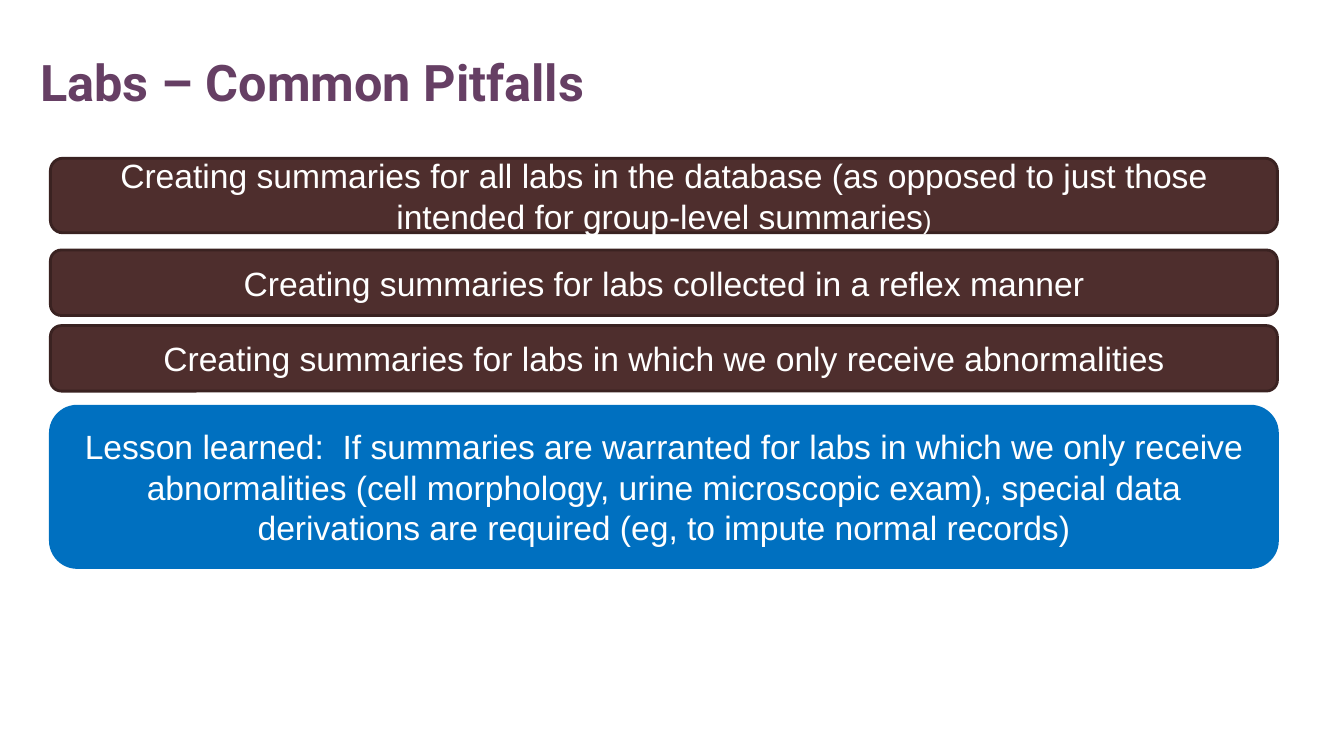
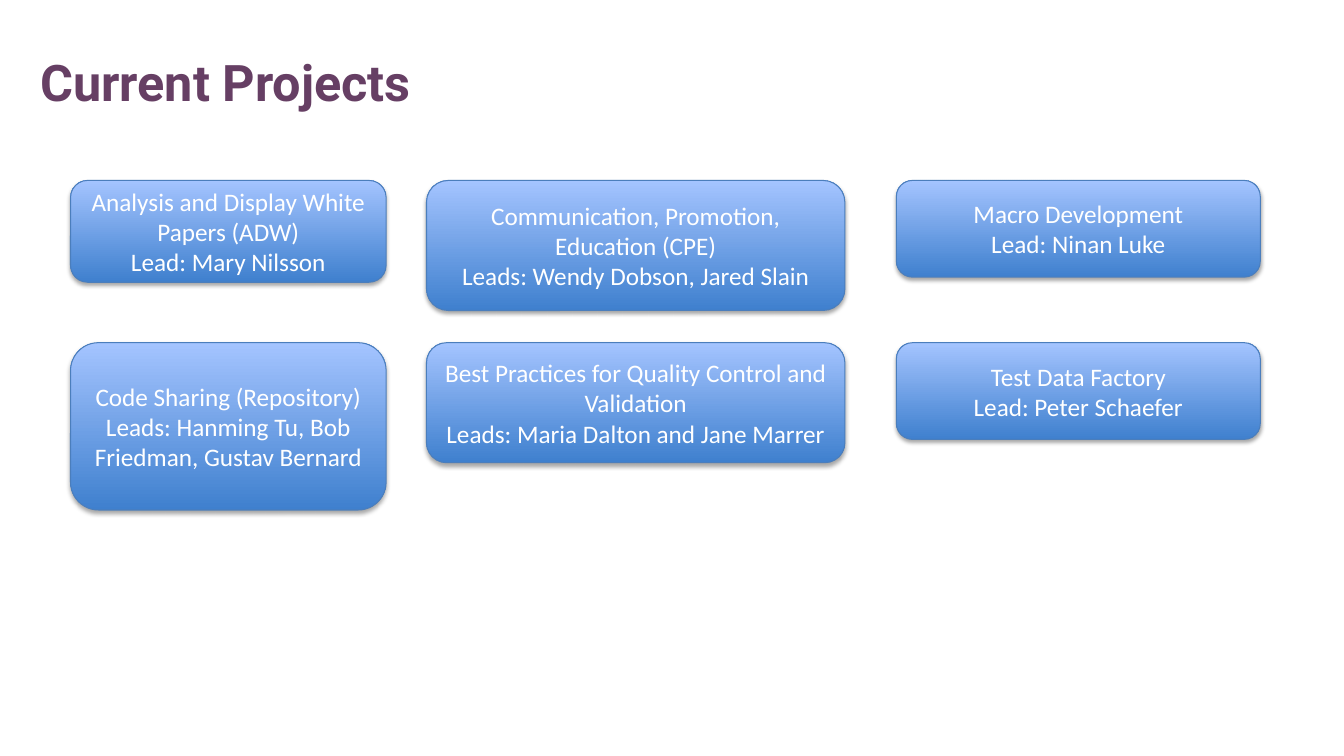
"""Build two slides: common lab pitfalls and current projects."""
from lxml.etree import SubElement
from pptx import Presentation
from pptx.dml.color import RGBColor
from pptx.enum.shapes import MSO_SHAPE
from pptx.enum.text import MSO_ANCHOR, PP_ALIGN
from pptx.oxml.ns import qn
from pptx.util import Emu, Pt

PX = 9144
COLORS = {
    "title": "663F64", "text": "FFFFFF", "shadow": "000000",
    "pitfall": "4E2E2D", "pitfall_line": "3A2221", "lesson": "0070C0",
    "project_bottom": "3F80CE", "project_top": "A4C4FF", "project_line": "4B7EBC",
}
TITLE_FONT = {"name": "Roboto", "size": Pt(36), "bold": True}
PITFALL_FONT = {"name": "Arial", "size": Pt(24)}
PROJECT_FONT = {"name": "Calibri", "size": Pt(18)}


def write_text(shape, paragraphs, font_format, color, align, anchor):
    """Write paragraphs, each a list of runs, in one format."""
    frame = shape.text_frame
    frame.word_wrap = True
    frame.vertical_anchor = anchor
    for index, runs in enumerate(paragraphs):
        paragraph = frame.add_paragraph() if index else frame.paragraphs[0]
        paragraph.alignment = align
        for text in runs:
            run = paragraph.add_run()
            run.text = text
            for name, value in font_format.items():
                setattr(run.font, name, value)
            run.font.color.rgb = RGBColor.from_string(COLORS[color])


def add_box(slide, bounds, paragraphs, font_format, line_color, line_width):
    """Add a rounded box with centred white text and return it."""
    shape = slide.shapes.add_shape(
        MSO_SHAPE.ROUNDED_RECTANGLE, *[Emu(length * PX) for length in bounds])
    shape.shadow.inherit = False
    shape.line.color.rgb = RGBColor.from_string(COLORS[line_color])
    shape.line.width = Pt(line_width)
    write_text(shape, paragraphs, font_format, "text", PP_ALIGN.CENTER, MSO_ANCHOR.MIDDLE)
    return shape


presentation = Presentation()
presentation.slide_width = Emu(1333 * PX)
presentation.slide_height = Emu(750 * PX)

slides = []
for title in ("Labs – Common Pitfalls", "Current Projects"):
    slide = presentation.slides.add_slide(presentation.slide_layouts[6])
    title_box = slide.shapes.add_textbox(*[Emu(length * PX) for length in (30, 46, 1278, 111)])
    write_text(title_box, [[title]], TITLE_FONT, "title", PP_ALIGN.LEFT, MSO_ANCHOR.TOP)
    slides.append(slide)
pitfalls_slide, projects_slide = slides

pitfalls = [
    (157, 74, "pitfall", "pitfall_line",
     ["Creating summaries for all labs in the database (as opposed to just those "
      "intended for group-level summaries", ")"]),
    (248, 65, "pitfall", "pitfall_line",
     ["Creating summaries for labs collected in a reflex manner"]),
    (323, 65, "pitfall", "pitfall_line",
     ["Creating summaries for labs in which we only receive abnormalities"]),
    (403, 160, "lesson", "lesson",
     ["Lesson learned:  If summaries are warranted for labs in which we only receive "
      "abnormalities (cell morphology, urine microscopic exam), special data "
      "derivations are required (eg, to impute normal records)"]),
]
for top, height, fill_color, line_color, runs in pitfalls:
    box = add_box(pitfalls_slide, (50, top, 1217, height), [runs], PITFALL_FONT, line_color, 2)
    box.fill.solid()
    box.fill.fore_color.rgb = RGBColor.from_string(COLORS[fill_color])
    for small_run in box.text_frame.paragraphs[0].runs[1:]:
        small_run.font.size = Pt(18)

row_tops = (179, 340)
project_columns = [
    (70, 313, [
        (101, "Analysis and Display White Papers (ADW)", "Lead: Mary Nilsson"),
        (166, "Code Sharing (Repository)", "Leads: Hanming Tu, Bob Friedman, Gustav Bernard"),
    ]),
    (423, 415, [
        (129, "Communication, Promotion, Education (CPE)", "Leads: Wendy Dobson, Jared Slain"),
        (119, "Best Practices for Quality Control and Validation",
         "Leads: Maria Dalton and Jane Marrer"),
    ]),
    (889, 361, [
        (96, "Macro Development", "Lead: Ninan Luke"),
        (96, "Test Data Factory", "Lead: Peter Schaefer"),
    ]),
]
for left, width, projects in project_columns:
    for top, (height, project, leads) in zip(row_tops, projects):
        box = add_box(projects_slide, (left, top, width, height), [[project], [leads]],
                      PROJECT_FONT, "project_line", 0.75)
        box.fill.gradient()
        box.fill.gradient_angle = 90
        for stop, color in zip(box.fill.gradient_stops, ("project_bottom", "project_top")):
            stop.color.rgb = RGBColor.from_string(COLORS[color])
        effects = box._element.spPr.find(qn("a:effectLst"))
        shadow = SubElement(effects, qn("a:outerShdw"), blurRad=str(Pt(3.1)),
                            dist=str(Pt(1.8)), dir="5400000", rotWithShape="0")
        shadow_color = SubElement(shadow, qn("a:srgbClr"), val=COLORS["shadow"])
        SubElement(shadow_color, qn("a:alpha"), val="35000")

presentation.save("out.pptx")
